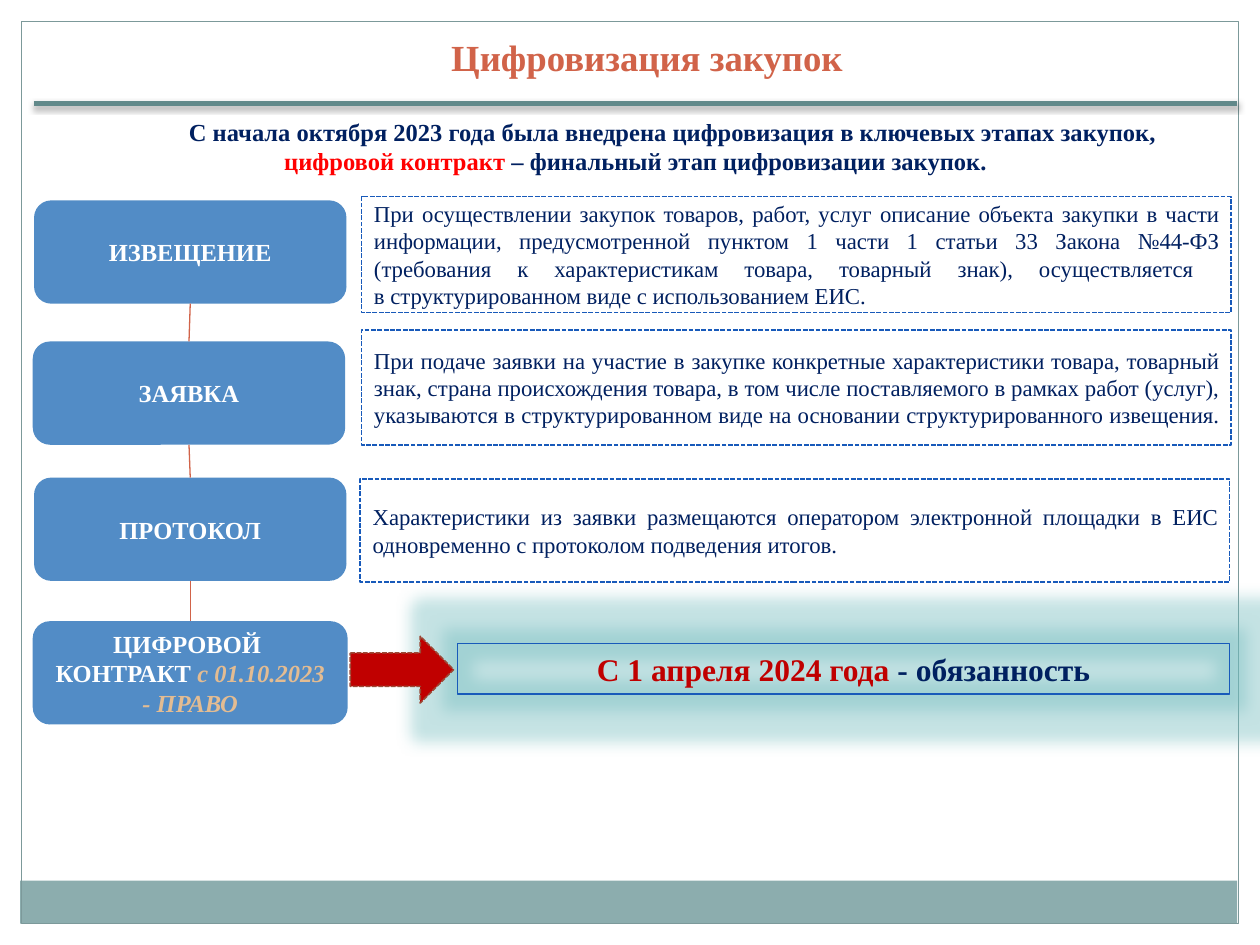
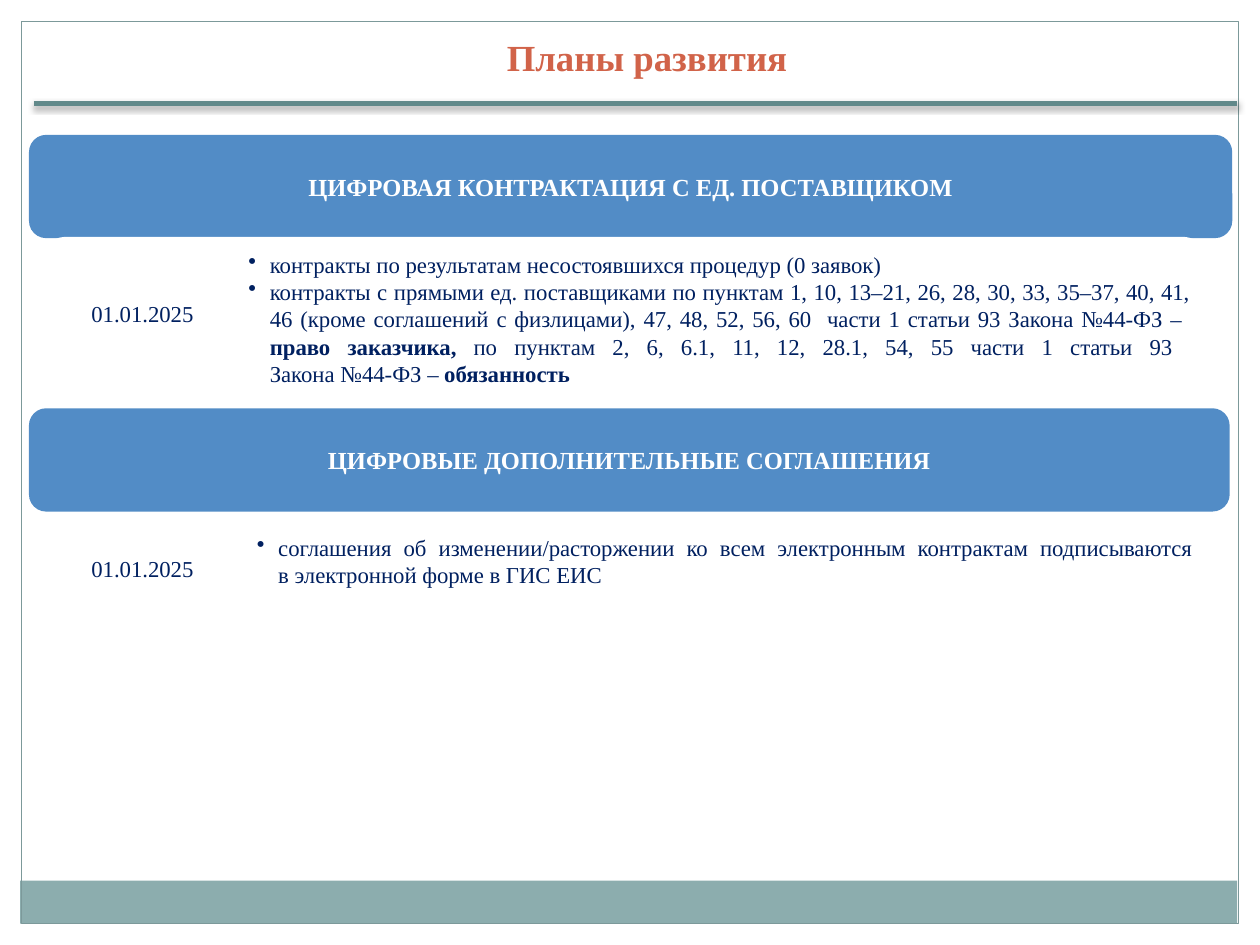
from dataclasses import dataclass
from itertools import pairwise
from typing import Any, NamedTuple

from lxml import etree
from pptx import Presentation
from pptx.dml.color import RGBColor
from pptx.enum.dml import MSO_LINE
from pptx.enum.shapes import MSO_CONNECTOR, MSO_SHAPE
from pptx.enum.text import MSO_ANCHOR, MSO_AUTO_SIZE, PP_ALIGN
from pptx.oxml.ns import qn
from pptx.util import Emu, Inches, Pt

RECTANGLE, ROUNDED, ARROW = MSO_SHAPE.RECTANGLE, MSO_SHAPE.ROUNDED_RECTANGLE, MSO_SHAPE.RIGHT_ARROW
STRAIGHT = MSO_CONNECTOR.STRAIGHT
DASH = MSO_LINE.SQUARE_DOT
TOP, MIDDLE, BOTTOM = MSO_ANCHOR.TOP, MSO_ANCHOR.MIDDLE, MSO_ANCHOR.BOTTOM
LEFT, CENTER, JUSTIFY = PP_ALIGN.LEFT, PP_ALIGN.CENTER, PP_ALIGN.JUSTIFY
NO_AUTOFIT = MSO_AUTO_SIZE.NONE
TITLE_ONLY = 5

# Grid of square cells, 100 columns by 75 rows
SLIDE_WIDTH, SLIDE_HEIGHT = Inches(10), Inches(7.5)
CELL = SLIDE_WIDTH // 100
PILL_ROWS = 8.2


@dataclass(frozen=True)
class Theme:
    font: str = "Times New Roman"
    white: str = "FFFFFF"
    navy: str = "002060"
    coral: str = "D16349"
    red: str = "FF0000"
    crimson: str = "C00000"
    sand: str = "E3BC92"
    pill: str = "528CC6"
    outline: str = "185ABA"
    arrow_edge: str = "9B4936"
    footer: str = "8CADAE"
    frame: str = "7C999A"
    rule: str = "61898A"
    glow: str = "6FBABC"
    title_size: float = 21
    accent_size: float = 18
    label_size: float = 14
    body_size: float = 13


THEME = Theme()


class Place(NamedTuple):
    column: float
    row: float
    columns: float
    rows: float

    @property
    def center(self) -> float:
        return self.column + self.columns / 2

    @property
    def bottom(self) -> float:
        return self.row + self.rows


class Piece(NamedTuple):
    text: str
    size: float = THEME.body_size
    color: str = THEME.navy
    bold: bool = False
    italic: bool = False


class Line(NamedTuple):
    pieces: list[Piece]
    alignment: Any = CENTER
    margin: float = 0
    indent: float = 0
    bullet: str = ""


class Edge(NamedTuple):
    color: str
    width: float
    dash: Any = None


class Stage(NamedTuple):
    pill: Place
    label: list[Piece]
    panel: Place | None = None
    description: str = ""


class Plan(NamedTuple):
    heading: str
    pill: Place
    panel: Place
    lines: list[Line]
    date: str
    date_place: Place
    bottom_inset: float = 0.05


def cells(count: float) -> Emu:
    return Emu(round(count * CELL))


def apply_format(target: Any, values: dict[str, Any]) -> None:
    for name, value in values.items():
        setattr(target, name, value)


# Text
def write_text(shape: Any, lines: list[Line], **frame_format: Any) -> None:
    frame = shape.text_frame
    apply_format(frame, {"word_wrap": True, "auto_size": NO_AUTOFIT,
                         "vertical_anchor": MIDDLE} | frame_format)
    for index, line in enumerate(lines):
        paragraph = frame.add_paragraph() if index else frame.paragraphs[0]
        paragraph.alignment = line.alignment
        properties = paragraph._p.get_or_add_pPr()
        properties.set("marL", str(Inches(line.margin)))
        properties.set("indent", str(Inches(line.indent)))
        if line.bullet:
            etree.SubElement(properties, qn("a:buChar"), char=line.bullet)
        for piece in line.pieces:
            write_piece(paragraph, piece)


def write_piece(paragraph: Any, piece: Piece) -> None:
    for index, part in enumerate(piece.text.split("\n")):
        if index:
            paragraph.add_line_break()
        if part:
            run = paragraph.add_run()
            run.text = part
            apply_format(run.font, {"name": THEME.font, "size": Pt(piece.size),
                                    "bold": piece.bold, "italic": piece.italic})
            run.font.color.rgb = RGBColor.from_string(piece.color)


# Shapes
def set_edge(line: Any, edge: Edge) -> None:
    line.color.rgb = RGBColor.from_string(edge.color)
    line.width = Pt(edge.width)
    if edge.dash is not None:
        line.dash_style = edge.dash


def add_box(slide: Any, kind: Any, place: Place, fill: str = "", edge: Edge | None = None) -> Any:
    shape = slide.shapes.add_shape(kind, *map(cells, place))
    shape.shadow.inherit = False
    if fill:
        shape.fill.solid()
        shape.fill.fore_color.rgb = RGBColor.from_string(fill)
    else:
        shape.fill.background()
    if edge:
        set_edge(shape.line, edge)
    else:
        shape.line.fill.background()
    return shape


def add_line(slide: Any, start: tuple[float, float], end: tuple[float, float], edge: Edge) -> Any:
    connector = slide.shapes.add_connector(STRAIGHT, *map(cells, (*start, *end)))
    set_edge(connector.line, edge)
    etree.SubElement(connector.element.spPr, qn("a:effectLst"))
    return connector


def add_effect(shape: Any, kind: str, color: str, opacity: int, **lengths: Any) -> None:
    effects = shape.element.spPr.find(qn("a:effectLst"))
    effect = etree.SubElement(effects, qn(kind), {name: str(value) for name, value in lengths.items()})
    tint = etree.SubElement(effect, qn("a:srgbClr"), val=color)
    etree.SubElement(tint, qn("a:alpha"), val=str(opacity * 1000))


def add_pill(slide: Any, place: Place, pieces: list[Piece]) -> None:
    write_text(add_box(slide, ROUNDED, place, THEME.pill), [Line(pieces)])


def label(text: str, color: str = THEME.white, **style: Any) -> Piece:
    return Piece(text, THEME.label_size, color, **({"bold": True} | style))


# Parts shared by both slides
def decorate_layout(layout: Any, slide: Any) -> None:
    parts = [add_box(slide, RECTANGLE, place, THEME.white) for place in
             (Place(0, 0, 100, 1.7), Place(98.3, 0, 1.7, 75), Place(0, 0, 1.7, 75))]
    parts.append(add_box(slide, RECTANGLE, Place(1.6, 69.9, 96.6, 3.4), THEME.footer))
    parts.append(add_box(slide, RECTANGLE, Place(1.7, 1.7, 96.6, 71.6), edge=Edge(THEME.frame, 0.75)))
    rule = add_line(slide, (2.7, 8.2), (98.2, 8.2), Edge(THEME.rule, 3))
    add_effect(rule, "a:outerShdw", "000000", 38, blurRad=Pt(3.1), dist=Pt(1.6),
               dir=90 * 60000, algn="ctr", rotWithShape=0)
    for part in [*parts, rule]:
        layout.shapes.element.append(part.element)


def add_title(slide: Any, text: str) -> None:
    title = slide.shapes.title
    apply_format(title, dict(zip(("left", "top", "width", "height"),
                                 map(cells, Place(4.1, 3.1, 94.5, 3.7)))))
    write_text(title, [Line([Piece(text, THEME.title_size, THEME.coral, True)])], vertical_anchor=BOTTOM)
    title.text_frame.paragraphs[0].line_spacing = 0.9


# Slide 1: stages of procurement
STAGES = [
    Stage(Place(2.7, 15.9, 24.8, PILL_ROWS), [label("ИЗВЕЩЕНИЕ")], Place(28.7, 15.6, 69, 9.2),
          "При осуществлении закупок товаров, работ, услуг описание объекта закупки в части информации, "
          "предусмотренной пунктом 1 части 1 статьи 33 Закона №44-ФЗ (требования к характеристикам товара, "
          "товарный знак), осуществляется \nв структурированном виде с использованием ЕИС."),
    Stage(Place(2.6, 27.1, 24.8, PILL_ROWS), [label("ЗАЯВКА")], Place(28.7, 26.2, 69, 9.1),
          "При подаче заявки на участие в закупке конкретные характеристики товара, товарный знак, страна "
          "происхождения товара, в том числе поставляемого в рамках работ (услуг), указываются в "
          "структурированном виде на основании структурированного извещения. "),
    Stage(Place(2.7, 37.9, 24.8, PILL_ROWS), [label("ПРОТОКОЛ")], Place(28.6, 38, 69, 8.2),
          "Характеристики из заявки размещаются оператором электронной площадки в ЕИС одновременно с "
          "протоколом подведения итогов."),
    Stage(Place(2.6, 49.3, 25, PILL_ROWS),
          [label("ЦИФРОВОЙ \nКОНТРАКТ "), label("с 01.10.2023 - ПРАВО", THEME.sand, italic=True)]),
]


def build_stages(slide: Any) -> None:
    add_title(slide, "Цифровизация закупок")
    intro = slide.shapes.add_textbox(*map(cells, Place(3.7, 8.8, 93.5, 5.7)))
    write_text(intro, [Line([
        label("С начала октября 2023 года была внедрена цифровизация в ключевых этапах закупок, ", THEME.navy),
        label("цифровой контракт ", THEME.red),
        label("– финальный этап цифровизации закупок.", THEME.navy)], indent=0.59)], vertical_anchor=TOP)

    for stage in STAGES:
        add_pill(slide, stage.pill, stage.label)
        if stage.panel:
            panel = add_box(slide, RECTANGLE, stage.panel, THEME.white, Edge(THEME.outline, 0.9, DASH))
            write_text(panel, [Line([Piece(stage.description)], JUSTIFY)])
    for upper, lower in pairwise(stage.pill for stage in STAGES):
        add_line(slide, (upper.center, upper.bottom), (lower.center, lower.row), Edge(THEME.coral, 0.75))

    duty = add_box(slide, RECTANGLE, Place(36.3, 51.1, 61.3, 4), edge=Edge(THEME.outline, 0.75))
    add_effect(duty, "a:glow", THEME.glow, 40, rad=Pt(18))
    write_text(duty, [Line([Piece("С 1 апреля 2024 года ", THEME.accent_size, THEME.crimson, True),
                            Piece("- обязанность", THEME.accent_size, bold=True)])], vertical_anchor=TOP)
    add_box(slide, ARROW, Place(27.8, 50.5, 8.2, 5.3), THEME.crimson, Edge(THEME.arrow_edge, 0.9, DASH))


# Slide 2: development plans
def bullet(pieces: list[Piece], alignment: Any = JUSTIFY) -> Line:
    return Line(pieces, alignment, 1.67, -0.17, "•")


PLANS = [
    Plan("ЦИФРОВАЯ КОНТРАКТАЦИЯ С ЕД. ПОСТАВЩИКОМ", Place(2.3, 10.7, 95.5, PILL_ROWS),
         Place(3.1, 18.8, 92.9, 13),
         [bullet([Piece("контракты по результатам несостоявшихся процедур (0 заявок)")], LEFT),
          bullet([Piece("контракты с прямыми ед. поставщиками по пунктам 1, 10, 13–21, 26, 28, 30, 33, 35–37, 40, "
                        "41, 46 (кроме соглашений с физлицами), 47, 48, 52, 56, 60  части 1 статьи 93 Закона "
                        "№44-ФЗ – \n"),
                  Piece("право заказчика, ", bold=True),
                  Piece("по пунктам 2, 6, 6.1, 11, 12, 28.1, 54, 55 части 1 статьи 93 \nЗакона №44-ФЗ – "),
                  Piece("обязанность", bold=True)])],
         "01.01.2025", Place(5.1, 21.7, 12.4, 6.4)),
    Plan("ЦИФРОВЫЕ ДОПОЛНИТЕЛЬНЫЕ СОГЛАШЕНИЯ", Place(2.3, 32.4, 95.3, PILL_ROWS),
         Place(4, 41.4, 92.9, 8.2),
         [bullet([Piece("соглашения об изменении/расторжении ко всем электронным контрактам подписываются \n"
                        "в электронной форме в ГИС ЕИС")])],
         "01.01.2025", Place(5.1, 41.9, 12.4, 6.4), 0.25),
]


def build_plans(slide: Any) -> None:
    add_title(slide, "Планы развития")
    for plan in PLANS:
        add_pill(slide, plan.pill, [label(plan.heading)])
        panel = add_box(slide, ROUNDED, plan.panel, THEME.white)
        write_text(panel, plan.lines, margin_bottom=Inches(plan.bottom_inset))
        date = add_box(slide, RECTANGLE, plan.date_place, THEME.white)
        write_text(date, [Line([Piece(plan.date)])])


def main() -> None:
    presentation = Presentation()
    apply_format(presentation, {"slide_width": SLIDE_WIDTH, "slide_height": SLIDE_HEIGHT})
    layout = presentation.slide_layouts[TITLE_ONLY]
    stages_slide, plans_slide = (presentation.slides.add_slide(layout) for _ in range(2))
    decorate_layout(layout, stages_slide)
    build_stages(stages_slide)
    build_plans(plans_slide)
    presentation.save("out.pptx")


if __name__ == "__main__":
    main()
